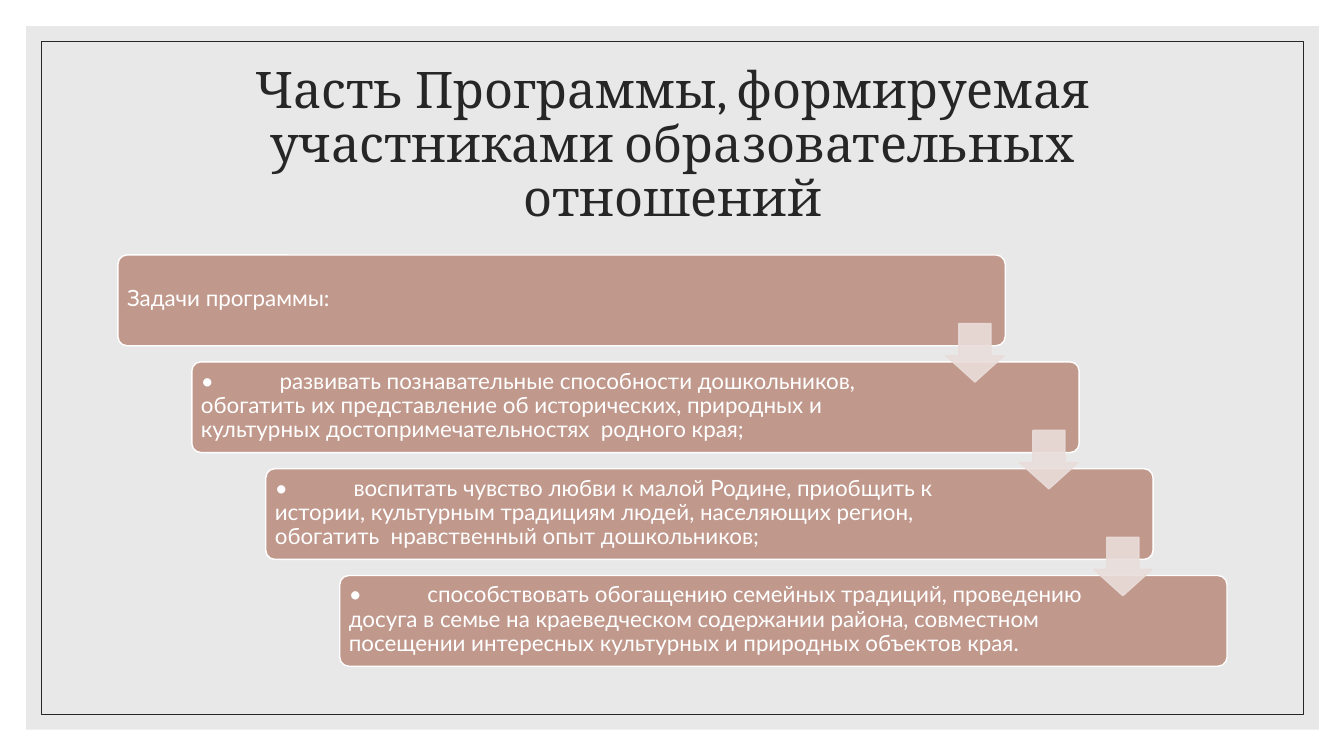
from lxml import etree
from pptx import Presentation
from pptx.dml.color import RGBColor
from pptx.enum.shapes import MSO_SHAPE
from pptx.enum.text import MSO_ANCHOR, MSO_AUTO_SIZE, PP_ALIGN
from pptx.oxml.ns import qn
from pptx.util import Inches, Pt

RECTANGLE = MSO_SHAPE.RECTANGLE
ROUNDED = MSO_SHAPE.ROUNDED_RECTANGLE
DOWN_ARROW = MSO_SHAPE.DOWN_ARROW
MIDDLE = MSO_ANCHOR.MIDDLE
NO_AUTOFIT = MSO_AUTO_SIZE.NONE
CENTER = PP_ALIGN.CENTER
LEFT = PP_ALIGN.LEFT

WHITE = RGBColor(0xFF, 0xFF, 0xFF)
GRAY = RGBColor(0xD9, 0xD9, 0xD9)
DARK = RGBColor(0x26, 0x26, 0x26)
CLAY = RGBColor(0xC1, 0x98, 0x8C)
PALE_CLAY = RGBColor(0xE9, 0xDD, 0xDA)

TITLE = "Часть Программы, формируемая участниками образовательных отношений"
# Wording and text width of each step
STEPS = [
    ("Задачи программы:", 7.76),
    ("•\tразвивать познавательные способности дошкольников, обогатить их "
     "представление об исторических, природных и культурных "
     "достопримечательностях  родного края;", 7.43),
    ("•\tвоспитать чувство любви к малой Родине, приобщить к истории, "
     "культурным традициям людей, населяющих регион, обогатить  "
     "нравственный опыт дошкольников;", 7.44),
    ("•\tспособствовать обогащению семейных традиций, проведению досуга в "
     "семье на краеведческом содержании района, совместном посещении "
     "интересных культурных и природных объектов края.", 7.43),
]
STEP_WIDTH, STEP_HEIGHT = 8.8, 0.9
SHIFT_X, SHIFT_Y = STEP_WIDTH / 12, 1.06
ARROW_SIZE = 0.58
TAB_STOP = 0.78

TITLE_FONT = {"name": "Cambria", "size": Pt(36), "bold": False}
STEP_FONT = {"name": "Lato", "size": Pt(16)}
TITLE_PARAGRAPH = {"alignment": CENTER, "line_spacing": 0.9}
STEP_PARAGRAPH = {"alignment": LEFT, "line_spacing": 0.9, "space_after": Pt(5.6)}
FRAME = {"word_wrap": True, "auto_size": NO_AUTOFIT, "vertical_anchor": MIDDLE}
STEP_FRAME = FRAME | {
    f"margin_{side}": Inches(0.07) for side in ("left", "top", "right", "bottom")
}


def set_attributes(target, values):
    for name, value in values.items():
        setattr(target, name, value)


def place(shape, left, top, width, height):
    set_attributes(shape, {"left": Inches(left), "top": Inches(top),
                           "width": Inches(width), "height": Inches(height)})


def write_text(shape, text, color, font, paragraph_format, frame_format):
    frame = shape.text_frame
    set_attributes(frame, frame_format)
    paragraph = frame.paragraphs[0]
    set_attributes(paragraph, paragraph_format)
    run = paragraph.add_run()
    run.text = text
    set_attributes(run.font, font)
    run.font.color.rgb = color
    return paragraph


def add_tab_stop(paragraph, position):
    properties = paragraph._p.get_or_add_pPr()
    tabs = etree.SubElement(properties, qn("a:tabLst"))
    etree.SubElement(tabs, qn("a:tab"), pos=str(Inches(position)), algn="l")


def add_figure(shapes, kind, box, fill=None, line=None, line_width=1,
               adjustments=(), opacity=100):
    """Add a preset shape; opacity in percent applies to fill and line."""
    shape = shapes.add_shape(kind, *map(Inches, box))
    shape.shadow.inherit = False
    for index, value in enumerate(adjustments):
        shape.adjustments[index] = value
    if fill is None:
        shape.fill.background()
    else:
        shape.fill.solid()
        shape.fill.fore_color.rgb = fill
    if line is None:
        shape.line.fill.background()
    else:
        shape.line.color.rgb = line
        shape.line.width = Pt(line_width)
    if opacity < 100:
        for color in shape.element.iter(qn("a:srgbClr")):
            etree.SubElement(color, qn("a:alpha"), val=str(opacity * 1000))
    return shape


def add_backdrop(shapes):
    add_figure(shapes, RECTANGLE, (0, 0, 13.33, 7.5), WHITE)
    add_figure(shapes, RECTANGLE, (0.26, 0.26, 12.82, 6.98), GRAY, opacity=60)
    add_figure(shapes, RECTANGLE, (0.41, 0.41, 12.52, 6.68), line=DARK, line_width=0.5)


def add_title(slide):
    title = slide.shapes.title
    place(title, 1.17, 0.7, 11, 1.5)
    write_text(title, TITLE, DARK, TITLE_FONT, TITLE_PARAGRAPH, FRAME)
    # Bring the title in front of the backdrop
    title.element.getparent().append(title.element)


def add_step(shapes, index, text, text_width):
    left, top = 1.17 + index * SHIFT_X, 2.53 + index * SHIFT_Y
    add_figure(shapes, ROUNDED, (left, top, STEP_WIDTH, STEP_HEIGHT),
               CLAY, WHITE, adjustments=[0.1])
    box = (left + 0.02, top + 0.02, text_width, 0.84)
    label = shapes.add_textbox(*map(Inches, box))
    paragraph = write_text(label, text, WHITE, STEP_FONT, STEP_PARAGRAPH, STEP_FRAME)
    if "\t" in text:
        add_tab_stop(paragraph, TAB_STOP)


def add_step_arrow(shapes, index):
    box = (9.38 + index * SHIFT_X, 3.21 + index * SHIFT_Y, ARROW_SIZE, ARROW_SIZE)
    add_figure(shapes, DOWN_ARROW, box, PALE_CLAY, PALE_CLAY,
               adjustments=[0.55, 0.45], opacity=90)


def main():
    presentation = Presentation()
    presentation.slide_width = Inches(13.33)
    presentation.slide_height = Inches(7.5)
    title_only = presentation.slide_layouts.get_by_name("Title Only")
    slide = presentation.slides.add_slide(title_only)

    add_backdrop(slide.shapes)
    add_title(slide)
    staircase = slide.shapes.add_group_shape().shapes
    for index, (text, text_width) in enumerate(STEPS):
        add_step(staircase, index, text, text_width)
    for index in range(len(STEPS) - 1):
        add_step_arrow(staircase, index)

    presentation.save("out.pptx")


if __name__ == "__main__":
    main()
